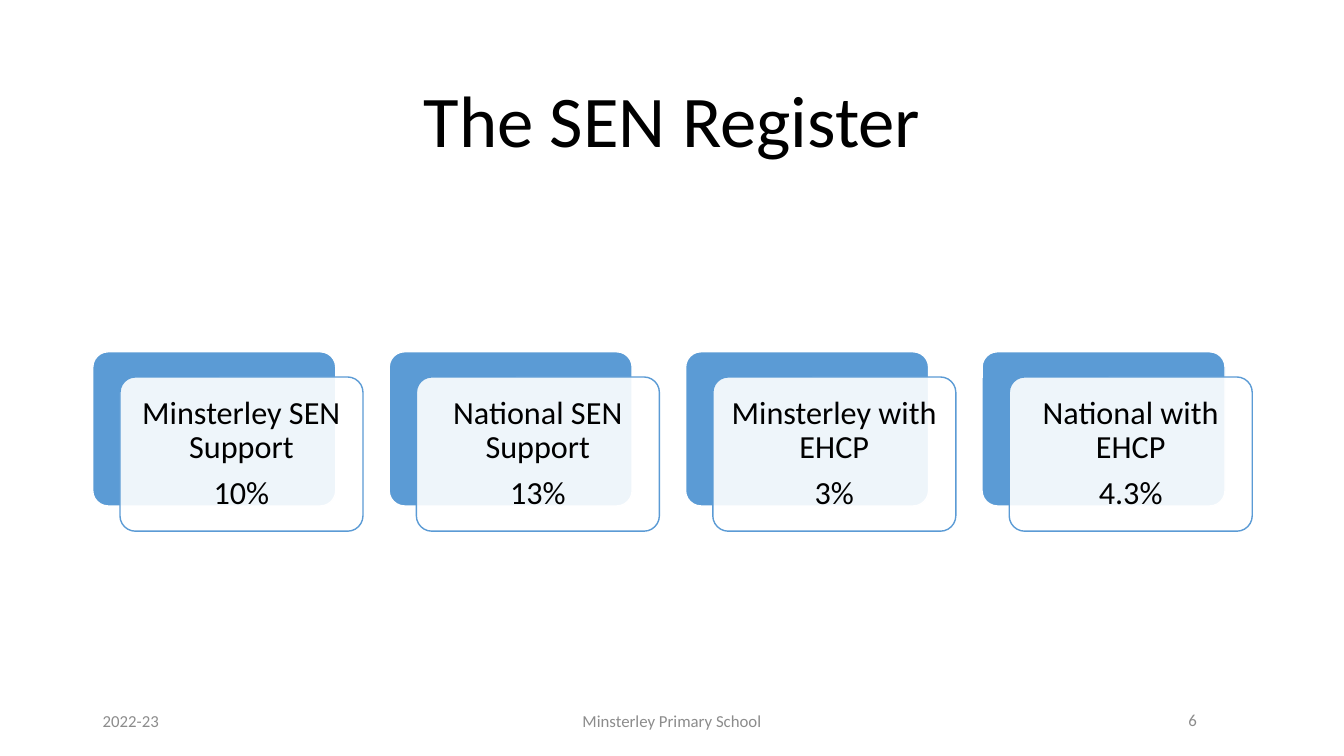
from pptx import Presentation
from pptx.dml.color import RGBColor
from pptx.enum import shapes, text
from pptx.oxml.ns import qn
from pptx.util import Inches, Pt
from lxml import etree

TITLE = "The SEN Register"
FIGURES = [
    ("Minsterley SEN Support", "10%"),
    ("National SEN Support", "13%"),
    ("Minsterley with EHCP", "3%"),
    ("National with EHCP", "4.3%"),
]
YEAR, SCHOOL, PAGE = "2022-23", "Minsterley Primary School", "6"

BLUE, WHITE, BLACK, GREY = "5B9BD5", "FFFFFF", "000000", "8C8C8C"
WIDTH, HEIGHT = 13.33, 7.5
MARGIN = 0.92
CARD_W, CARD_H, CARD_TOP, PITCH = 2.41, 1.53, 3.49, 2.94
OFFSET_X, OFFSET_Y = 0.27, 0.25
FOOT_TOP, FOOT_H, FOOT_W = 6.95, 0.4, 3
SCHOOL_W = 4.5
LEFT, CENTER, RIGHT = text.PP_ALIGN.LEFT, text.PP_ALIGN.CENTER, text.PP_ALIGN.RIGHT


def rgb(code):
    return RGBColor.from_string(code)


def write(shape, *lines, size, color=BLACK, align=CENTER, spacing=1.0, after=0, inset=None):
    frame = shape.text_frame
    frame.word_wrap = True
    frame.vertical_anchor = text.MSO_ANCHOR.MIDDLE
    if inset is not None:
        frame.margin_left = frame.margin_right = Inches(inset)
        frame.margin_top = frame.margin_bottom = Inches(inset)
    for i, line in enumerate(lines):
        paragraph = frame.add_paragraph() if i else frame.paragraphs[0]
        paragraph.alignment = align
        paragraph.line_spacing = spacing
        paragraph.space_after = Pt(after)
        run = paragraph.add_run()
        run.text = line
        run.font.name, run.font.size = "Calibri", Pt(size)
        run.font.color.rgb = rgb(color)


def add_card(slide, left, top, fill, line, opacity=100):
    card = slide.shapes.add_shape(shapes.MSO_SHAPE.ROUNDED_RECTANGLE, Inches(left),
                                  Inches(top), Inches(CARD_W), Inches(CARD_H))
    card.adjustments[0] = 0.1
    card.shadow.inherit = False
    card.fill.solid()
    card.fill.fore_color.rgb = rgb(fill)
    card.line.color.rgb = rgb(line)
    card.line.width = Pt(1)
    if opacity < 100:
        color = card._element.spPr.find(qn("a:solidFill")).find(qn("a:srgbClr"))
        etree.SubElement(color, qn("a:alpha"), val=str(opacity * 1000))
    return card


def add_footer(slide):
    top, height = Inches(FOOT_TOP), Inches(FOOT_H)
    footer = {"size": 12, "color": GREY, "after": 6}
    year = slide.shapes.add_textbox(Inches(MARGIN), top, Inches(FOOT_W), height)
    write(year, YEAR, align=LEFT, **footer)
    school = slide.shapes.add_textbox(Inches((WIDTH - SCHOOL_W) / 2), top,
                                      Inches(SCHOOL_W), height)
    write(school, SCHOOL, **footer)
    page = slide.shapes.add_shape(shapes.MSO_SHAPE.OVAL, Inches(WIDTH - MARGIN - FOOT_W),
                                  top, Inches(FOOT_W), height)
    page.shadow.inherit = False
    page.fill.background()
    page.line.fill.background()
    write(page, PAGE, align=RIGHT, spacing=0.9, **footer)


def main():
    deck = Presentation()
    deck.slide_width, deck.slide_height = Inches(WIDTH), Inches(HEIGHT)
    slide = deck.slides.add_slide(deck.slide_layouts[5])

    title = slide.shapes.title
    title.left, title.top = Inches(MARGIN), Inches(0.61)
    title.width, title.height = Inches(WIDTH - 2 * MARGIN), Inches(1.24)
    write(title, TITLE, size=52, spacing=0.9)

    add_footer(slide)
    for column, (group, share) in enumerate(FIGURES):
        left = MARGIN + column * PITCH
        add_card(slide, left, CARD_TOP, BLUE, WHITE)
        front = add_card(slide, left + OFFSET_X, CARD_TOP + OFFSET_Y, WHITE, BLUE, opacity=90)
        write(front, group, share, size=23, spacing=0.9, after=8, inset=0.1)

    deck.save("out.pptx")


if __name__ == "__main__":
    main()
